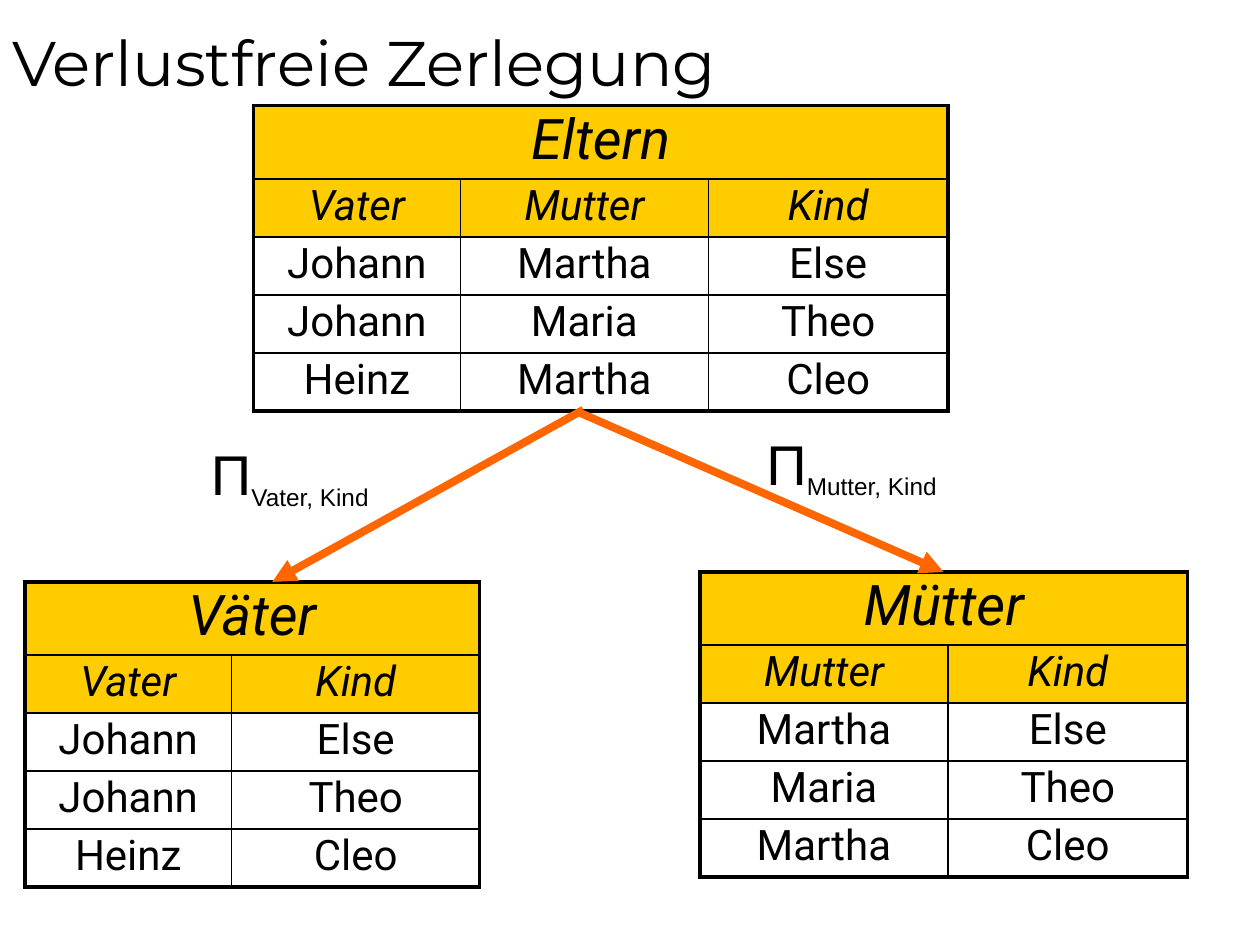
from pptx import Presentation
from pptx.dml.color import RGBColor
from pptx.enum.shapes import MSO_CONNECTOR
from pptx.enum.text import MSO_ANCHOR, PP_ALIGN
from pptx.oxml.ns import qn
from pptx.util import Cm, Pt
from lxml import etree

STRAIGHT = MSO_CONNECTOR.STRAIGHT
BOTTOM = MSO_ANCHOR.BOTTOM
CENTER = PP_ALIGN.CENTER
BLACK, GOLD, ORANGE = "000000", "FFCC00", "FF6600"
OUTER, INNER = 2.25, 1
# Column widths in cm
VATER, MUTTER, KIND = 4.17, 5, 4.83


def color(value):
    return RGBColor.from_string(value)


def set_font(font, name, size, italic=False):
    font.name = name
    font.size = Pt(size)
    font.italic = italic
    font.color.rgb = color(BLACK)


def add_text_box(page, left, top, width, height):
    box = page.shapes.add_textbox(Cm(left), Cm(top), Cm(width), Cm(height))
    return box.text_frame


def add_title(page, left, top, width, height, text):
    frame = add_text_box(page, left, top, width, height)
    frame.word_wrap = True
    frame.vertical_anchor = BOTTOM
    para = frame.paragraphs[0]
    para.text = text
    set_font(para.font, "Montserrat", 36)


def add_border(cell, side, width):
    props = cell._tc.get_or_add_tcPr()
    line = etree.SubElement(props, qn(f"a:ln{side}"), w=str(Pt(width)))
    fill = etree.SubElement(line, qn("a:solidFill"))
    etree.SubElement(fill, qn("a:srgbClr"), val=BLACK)


def add_relation(page, left, top, widths, heights, name, rows):
    """Table with a name row across all columns, then attributes and tuples."""
    frame = page.shapes.add_table(len(heights), len(widths), Cm(left), Cm(top),
                                  Cm(sum(widths)), Cm(sum(heights)))
    table = frame.table
    table.first_row = table.horz_banding = False
    for column, width in zip(table.columns, widths):
        column.width = Cm(width)
    for row, height in zip(table.rows, heights):
        row.height = Cm(height)
    table.cell(0, 0).merge(table.cell(0, len(widths) - 1))

    last_row, last_col = len(heights) - 1, len(widths) - 1
    texts = [[name] + [""] * last_col] + rows
    for r, row in enumerate(texts):
        for c, text in enumerate(row):
            cell = table.cell(r, c)
            # Heavy frame, thin inner lines
            edges = {"L": c == 0 or r == 0, "R": c == last_col or r == 0,
                     "T": r == 0, "B": r == last_row}
            for side, is_outer in edges.items():
                add_border(cell, side, OUTER if is_outer else INNER)
            # Gold header rows
            if r < 2:
                cell.fill.solid()
                cell.fill.fore_color.rgb = color(GOLD)
            else:
                cell.fill.background()
            para = cell.text_frame.paragraphs[0]
            para.text = text
            para.alignment = CENTER
            para.line_spacing = 0.9
            set_font(para.font, "Roboto", 32 if r == 0 else 24, r < 2)


def add_arrow(page, x1, y1, x2, y2):
    arrow = page.shapes.add_connector(STRAIGHT, Cm(x1), Cm(y1), Cm(x2), Cm(y2))
    arrow.line.color.rgb = color(ORANGE)
    arrow.line.width = Pt(4.5)
    etree.SubElement(arrow.line._get_or_add_ln(), qn("a:tailEnd"), type="triangle")
    etree.SubElement(arrow._element.spPr, qn("a:effectLst"))


def add_projection(page, left, top, width, height, attributes):
    frame = add_text_box(page, left, top, width, height)
    frame.word_wrap = False
    para = frame.paragraphs[0]
    para.alignment = CENTER
    for text, size in (("Π", 32), (attributes, 24)):
        span = para.add_run()
        span.text = text
        set_font(span.font, "Arial", size)
    # The attribute list is a subscript
    span._r.get_or_add_rPr().set("baseline", "-25000")


def main():
    deck = Presentation()
    deck.slide_width, deck.slide_height = Cm(25.4), Cm(19.05)
    page = deck.slides.add_slide(deck.slide_layouts[6])

    add_title(page, 0, 0, 25.4, 2.13, "Verlustfreie Zerlegung")

    # Full relation
    add_relation(page, 5.11, 2.13, [VATER, MUTTER, KIND], [1.47] + [1.17] * 4,
                 "Eltern", [["Vater", "Mutter", "Kind"],
                            ["Johann", "Martha", "Else"],
                            ["Johann", "Maria", "Theo"],
                            ["Heinz", "Martha", "Cleo"]])

    # Its two projections
    heights = [1.44, 1.16] + [1.15] * 3
    add_relation(page, 0.5, 11.73, [VATER, MUTTER], heights,
                 "Väter", [["Vater", "Kind"], ["Johann", "Else"],
                           ["Johann", "Theo"], ["Heinz", "Cleo"]])
    add_relation(page, 14.11, 11.53, [MUTTER, KIND], heights,
                 "Mütter", [["Mutter", "Kind"], ["Martha", "Else"],
                            ["Maria", "Theo"], ["Martha", "Cleo"]])

    # Arrows and their operators
    add_arrow(page, 11.76, 8.26, 5.49, 11.73)
    add_arrow(page, 11.71, 8.33, 19.02, 11.53)
    add_projection(page, 14.96, 8.53, 4.42, 1.6, "Mutter, Kind")
    add_projection(page, 3.76, 8.74, 4.17, 1.6, "Vater, Kind")

    deck.save("out.pptx")


if __name__ == "__main__":
    main()
